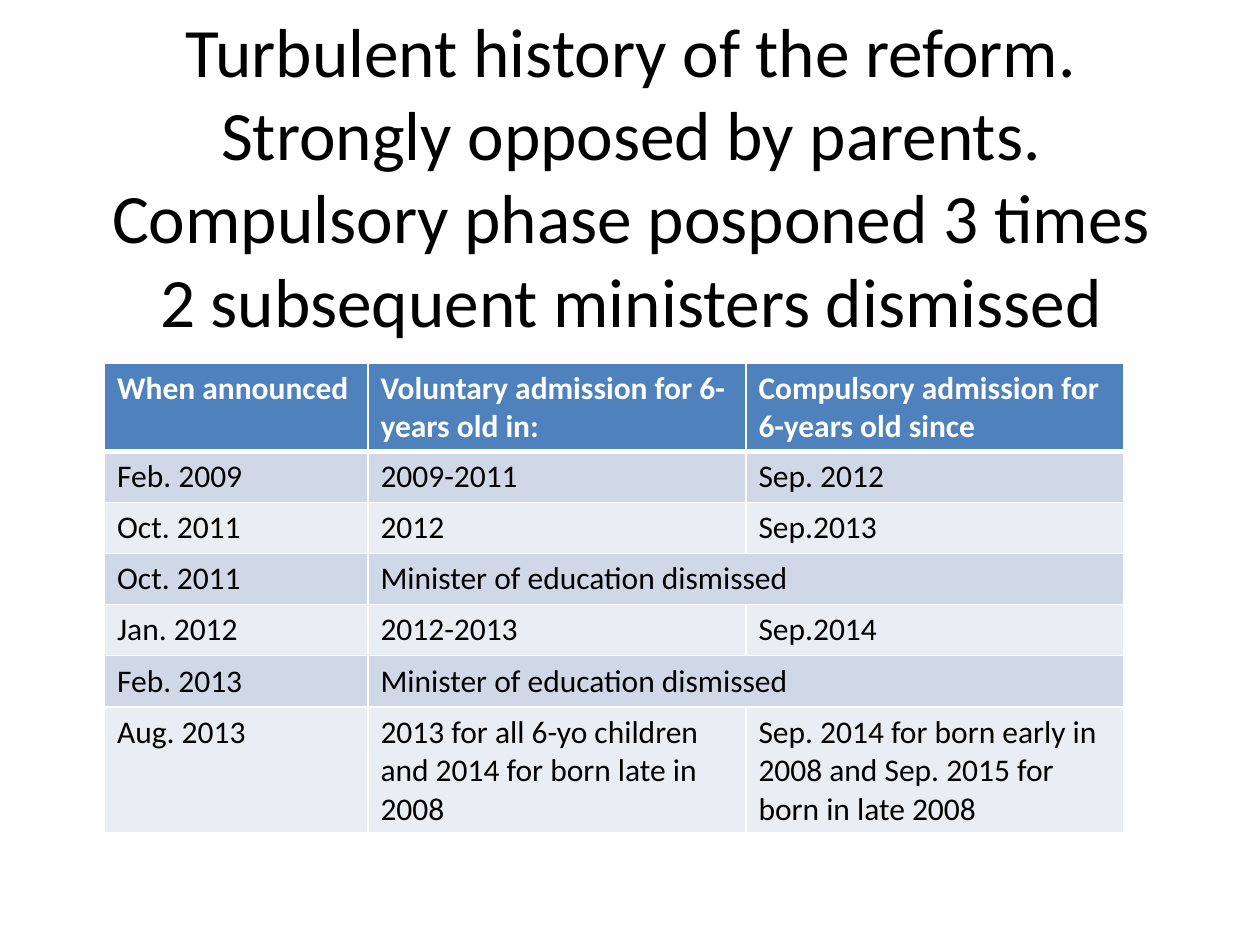
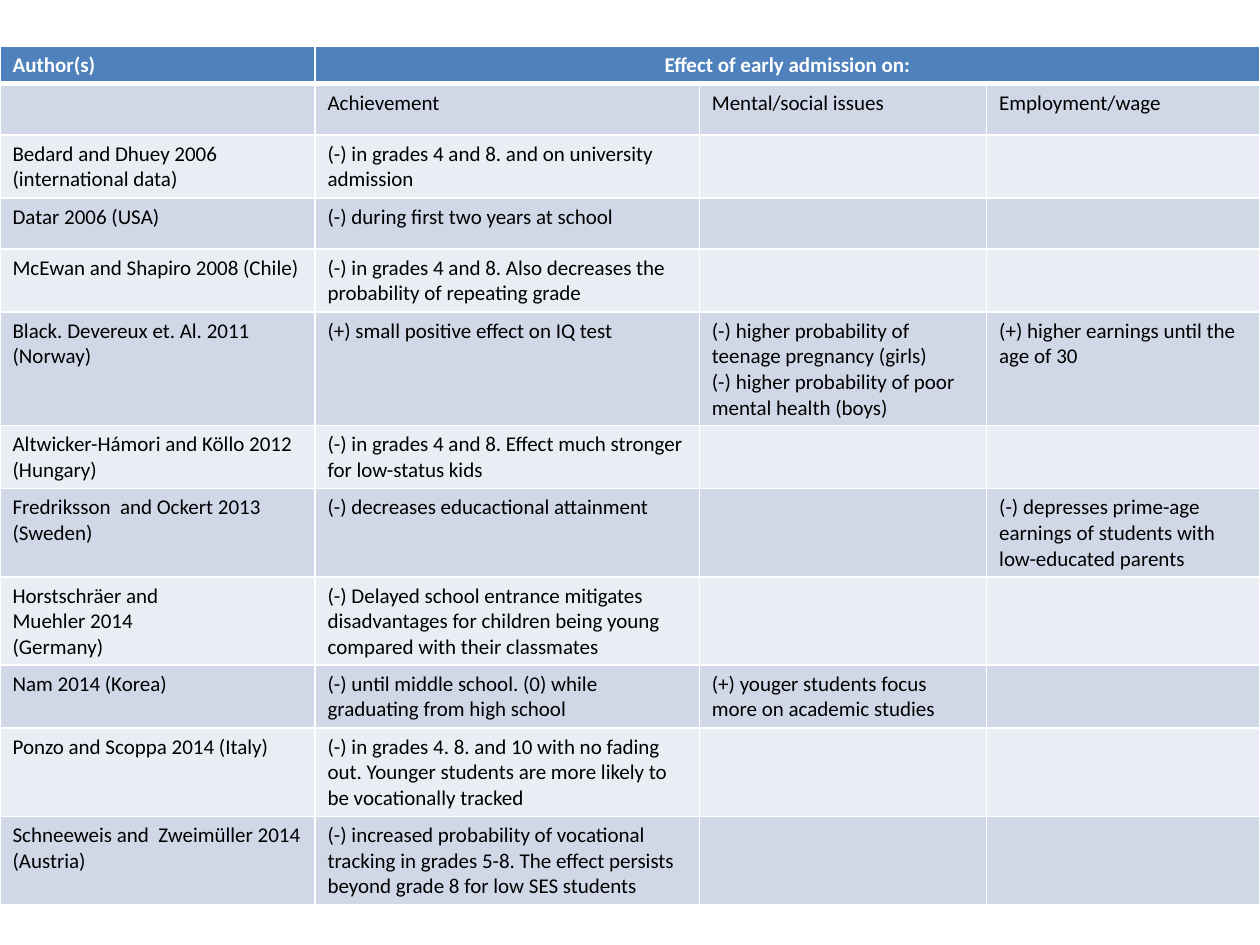
from dataclasses import dataclass

from lxml.etree import SubElement
from pptx import Presentation
from pptx.dml.color import RGBColor as Rgb
from pptx.enum.text import MSO_ANCHOR as Anchor, PP_ALIGN as Align
from pptx.oxml.ns import qn
from pptx.util import Pt


@dataclass(frozen=True)
class Theme:
    font: str = "Calibri"
    ink: str = "000000"
    paper: str = "FFFFFF"
    header: str = "4F81BD"
    bands: tuple = ("E9EDF4", "D0D8E8")
    title_size: float = 39.6
    rule: float = 1
    header_rule: float = 3


THEME = Theme()
MERGED = None

HEADLINE = (
    "Turbulent history of the reform. Strongly opposed by parents. "
    "Compulsory phase posponed 3 times\n2 subsequent ministers dismissed"
)

REFORM_HISTORY = {
    "place": (59.75, 207.5),
    "columns": (150.5, 216, 216),
    "header_height": 29.2,
    "size": 18,
    "rows": [
        ("When announced", "Voluntary admission for 6-years old in:",
         "Compulsory admission for 6-years old since"),
        ("Feb. 2009", "2009-2011", "Sep. 2012"),
        ("Oct. 2011", "2012", "Sep.2013"),
        ("Oct. 2011", "Minister of education dismissed", MERGED),
        ("Jan. 2012", "2012-2013", "Sep.2014"),
        ("Feb. 2013", "Minister of education dismissed", MERGED),
        ("Aug. 2013", "2013 for all 6-yo children and 2014 for born late in 2008",
         "Sep. 2014 for born early in 2008 and Sep. 2015 for born in late 2008"),
    ],
}

ADMISSION_EFFECTS = {
    "place": (0, 26.25),
    "columns": (180, 219.6, 164.2, 156.2),
    "header_height": 10.8,
    "size": 12,
    "rows": [
        ("Author(s)", "Effect of early admission on:", MERGED, MERGED),
        ("", "Achievement", "Mental/social issues", "Employment/wage"),
        ("Bedard and Dhuey 2006 (international data)",
         "(-) in grades 4 and 8. and on university admission", "", ""),
        ("Datar 2006 (USA)", "(-) during first two years at school", "", ""),
        ("McEwan and Shapiro 2008 (Chile)",
         "(-) in grades 4 and 8. Also decreases the probability of repeating grade", "", ""),
        ("Black. Devereux et. Al. 2011 (Norway)",
         "(+) small positive effect on IQ test",
         "(-) higher probability of teenage pregnancy (girls)\n"
         "(-) higher probability of poor mental health (boys)",
         "(+) higher earnings until the age of 30"),
        ("Altwicker-Hámori and Köllo 2012 (Hungary)",
         "(-) in grades 4 and 8. Effect much stronger for low-status kids", "", ""),
        ("Fredriksson  and Ockert 2013 (Sweden)",
         "(-) decreases educactional attainment", "",
         "(-) depresses prime-age earnings of students with low-educated parents"),
        ("Horstschräer and\nMuehler 2014\n(Germany)",
         "(-) Delayed school entrance mitigates disadvantages for children being young "
         "compared with their classmates", "", ""),
        ("Nam 2014 (Korea)",
         "(-) until middle school. (0) while graduating from high school",
         "(+) youger students focus more on academic studies", ""),
        ("Ponzo and Scoppa 2014 (Italy)",
         "(-) in grades 4. 8. and 10 with no fading out. Younger students are more likely "
         "to be vocationally tracked", "", ""),
        ("Schneeweis and  Zweimüller 2014 (Austria)",
         "(-) increased probability of vocational tracking in grades 5-8. The effect "
         "persists beyond grade 8 for low SES students", "", ""),
    ],
}

SLIDE_SIZE = (720, 540)
HEADLINE_BOX = (36.75, 54.75, 648, 90)
ROW_HEIGHT = 29.2


def format_text(frame, size, color, bold=False, align=None):
    values = {"name": THEME.font, "size": Pt(size), "bold": bold}
    for paragraph in frame.paragraphs:
        paragraph.alignment = align
        for run in paragraph.runs:
            for attribute, value in values.items():
                setattr(run.font, attribute, value)
            run.font.color.rgb = Rgb.from_string(color)


def add_headline(slide, headline):
    frame = slide.shapes.add_textbox(*map(Pt, HEADLINE_BOX)).text_frame
    for attribute, value in {"word_wrap": True, "vertical_anchor": Anchor.MIDDLE}.items():
        setattr(frame, attribute, value)
    frame.paragraphs[0].text = headline
    format_text(frame, THEME.title_size, THEME.ink, align=Align.CENTER)


def add_borders(cell, top, bottom):
    properties = cell._tc.get_or_add_tcPr()
    widths = {"a:lnL": THEME.rule, "a:lnR": THEME.rule, "a:lnT": top, "a:lnB": bottom}
    for side, width in widths.items():
        line = SubElement(properties, qn(side), w=str(Pt(width)))
        SubElement(SubElement(line, qn("a:solidFill")), qn("a:srgbClr"), val=THEME.paper)


def add_study_table(slide, study):
    rows, columns = study["rows"], study["columns"]
    heights = [study["header_height"]] + [ROW_HEIGHT] * (len(rows) - 1)
    extent = (sum(columns), sum(heights))
    grid = slide.shapes.add_table(
        len(rows), len(columns), *map(Pt, study["place"] + extent)).table
    for column, width in zip(grid.columns, columns):
        column.width = Pt(width)

    for r, (entries, height) in enumerate(zip(rows, heights)):
        grid.rows[r].height = Pt(height)
        is_header = r == 0
        fill = THEME.header if is_header else THEME.bands[r % 2]
        top = THEME.header_rule if r == 1 else THEME.rule
        bottom = THEME.header_rule if is_header else THEME.rule
        for c, entry in enumerate(entries):
            cell = grid.cell(r, c)
            add_borders(cell, top, bottom)
            cell.fill.solid()
            cell.fill.fore_color.rgb = Rgb.from_string(fill)
            if entry:
                cell.text_frame.text = entry
                spans = MERGED in entries[c + 1:c + 2]
                format_text(cell.text_frame, study["size"],
                            THEME.paper if is_header else THEME.ink, is_header,
                            Align.CENTER if is_header and spans else None)
        if MERGED in entries:
            first = entries.index(MERGED) - 1
            grid.cell(r, first).merge(grid.cell(r, len(columns) - 1))


def main():
    deck = Presentation()
    deck.slide_width, deck.slide_height = map(Pt, SLIDE_SIZE)
    for headline, study in ((HEADLINE, REFORM_HISTORY), (None, ADMISSION_EFFECTS)):
        slide = deck.slides.add_slide(deck.slide_layouts[6])
        if headline:
            add_headline(slide, headline)
        add_study_table(slide, study)
    deck.save("out.pptx")


if __name__ == "__main__":
    main()
